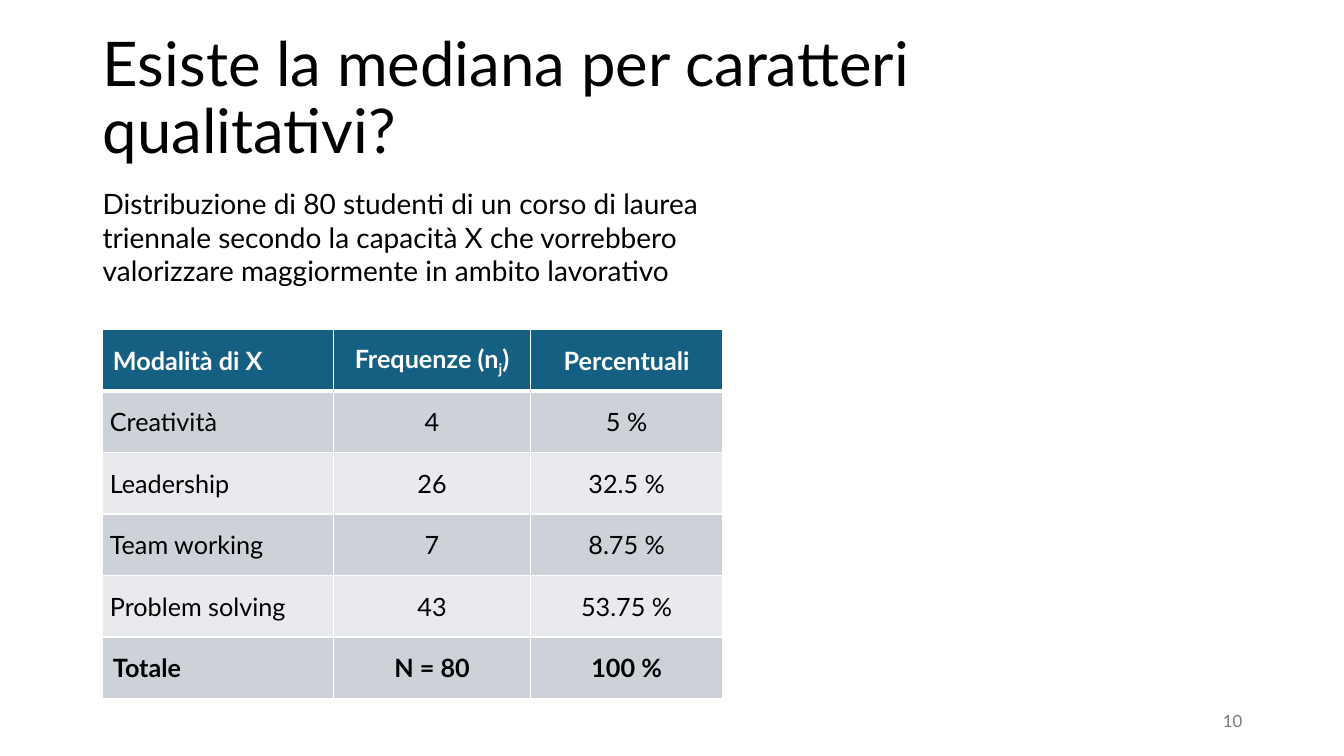
import pptx
import pptx.dml.color
import pptx.enum.text
import pptx.oxml
import pptx.oxml.ns
import pptx.util

Inches = pptx.util.Inches
Pt = pptx.util.Pt
Align = pptx.enum.text.PP_ALIGN
Anchor = pptx.enum.text.MSO_ANCHOR

FONT = "Lato"
BLACK, WHITE, GREY = "000000", "FFFFFF", "797979"
HEADER_FILL, ROW_FILLS = "156082", ("CCD2D8", "E8EAED")
COLUMN_WIDTHS = (2.29, 1.95, 1.91)
ROW_HEIGHT = 0.61
SUBSCRIPT = "-25000"

FREQUENCIES = [
    ("Modalità di X", "Frequenze (nj)", "Percentuali"),
    ("Creatività", "4", "5 %"),
    ("Leadership", "26", "32.5 %"),
    ("Team working", "7", "8.75 %"),
    ("Problem solving", "43", "53.75 %"),
    ("Totale", "N = 80", "100 %"),
]


def color(value):
    return pptx.dml.color.RGBColor.from_string(value)


def format_para(para, size, shade, align=Align.LEFT, bold=False):
    para.alignment = align
    for span in para.runs:
        span.font.name = FONT
        span.font.size = Pt(size)
        span.font.bold = bold
        span.font.color.rgb = color(shade)


def add_title(page, box, text):
    title = page.shapes.title
    title.left, title.top, title.width, title.height = map(Inches, box)
    frame = title.text_frame
    frame.text = text
    frame.auto_size = pptx.enum.text.MSO_AUTO_SIZE.NONE
    frame.vertical_anchor = Anchor.MIDDLE
    frame.paragraphs[0].line_spacing = 0.9
    format_para(frame.paragraphs[0], 44, BLACK)


def add_text(page, box, text, size, shade, align=Align.LEFT, anchor=Anchor.TOP):
    frame = page.shapes.add_textbox(*map(Inches, box)).text_frame
    frame.word_wrap = True
    frame.vertical_anchor = anchor
    frame.text = text
    format_para(frame.paragraphs[0], size, shade, align)


def set_borders(cell, top, bottom):
    properties = cell._tc.get_or_add_tcPr()
    for side, width in (("L", 1), ("R", 1), ("T", top), ("B", bottom)):
        properties.append(pptx.oxml.parse_xml(
            f'<a:ln{side} {pptx.oxml.ns.nsdecls("a")} w="{Pt(width)}">'
            f'<a:solidFill><a:srgbClr val="{WHITE}"/></a:solidFill></a:ln{side}>'))


def fill_cell(cell, text, row, column):
    header, total = row == 0, row == len(FREQUENCIES) - 1
    para = cell.text_frame.paragraphs[0]
    if text.endswith("(nj)"):
        # The index j is set as a subscript
        for part in (text[:-2], "j", ")"):
            span = para.add_run()
            span.text = part
            if part == "j":
                span._r.get_or_add_rPr().set("baseline", SUBSCRIPT)
    else:
        para.text = text
    format_para(para, 18, WHITE if header else BLACK,
                Align.CENTER if column else Align.LEFT, header or total)
    cell.vertical_anchor = Anchor.MIDDLE
    if column == 0 and not (header or total):
        cell.margin_left = Inches(0.07)
    # A thick rule parts the header from the rows below it
    set_borders(cell, 3 if row == 1 else 1, 3 if header else 1)
    cell.fill.solid()
    cell.fill.fore_color.rgb = color(HEADER_FILL if header else ROW_FILLS[(row - 1) % 2])


def add_frequency_table(page, left, top):
    rows, columns = len(FREQUENCIES), len(COLUMN_WIDTHS)
    table = page.shapes.add_table(
        rows, columns, Inches(left), Inches(top),
        Inches(sum(COLUMN_WIDTHS)), Inches(rows * ROW_HEIGHT)).table
    for column, width in enumerate(COLUMN_WIDTHS):
        table.columns[column].width = Inches(width)
    for row, values in enumerate(FREQUENCIES):
        table.rows[row].height = Inches(ROW_HEIGHT)
        for column, text in enumerate(values):
            fill_cell(table.cell(row, column), text, row, column)


def build_median_page(deck):
    page = deck.slides.add_slide(deck.slide_layouts[5])
    # Title and page number
    add_title(page, (0.92, 0.59, 10.48, 0.8),
              "Esiste la mediana per caratteri qualitativi?")
    add_text(page, (9.42, 6.95, 3, 0.4), "10", 12, GREY, Align.RIGHT, Anchor.MIDDLE)
    # Table and its introduction
    add_frequency_table(page, 1.02, 3.27)
    add_text(page, (0.92, 1.8, 6.93, 1.11),
             "Distribuzione di 80 studenti di un corso di laurea triennale secondo "
             "la capacità X che vorrebbero valorizzare maggiormente in ambito lavorativo",
             20, BLACK)


def main():
    deck = pptx.Presentation()
    deck.slide_width, deck.slide_height = Inches(13.33), Inches(7.5)
    build_median_page(deck)
    deck.save("out.pptx")


if __name__ == "__main__":
    main()
